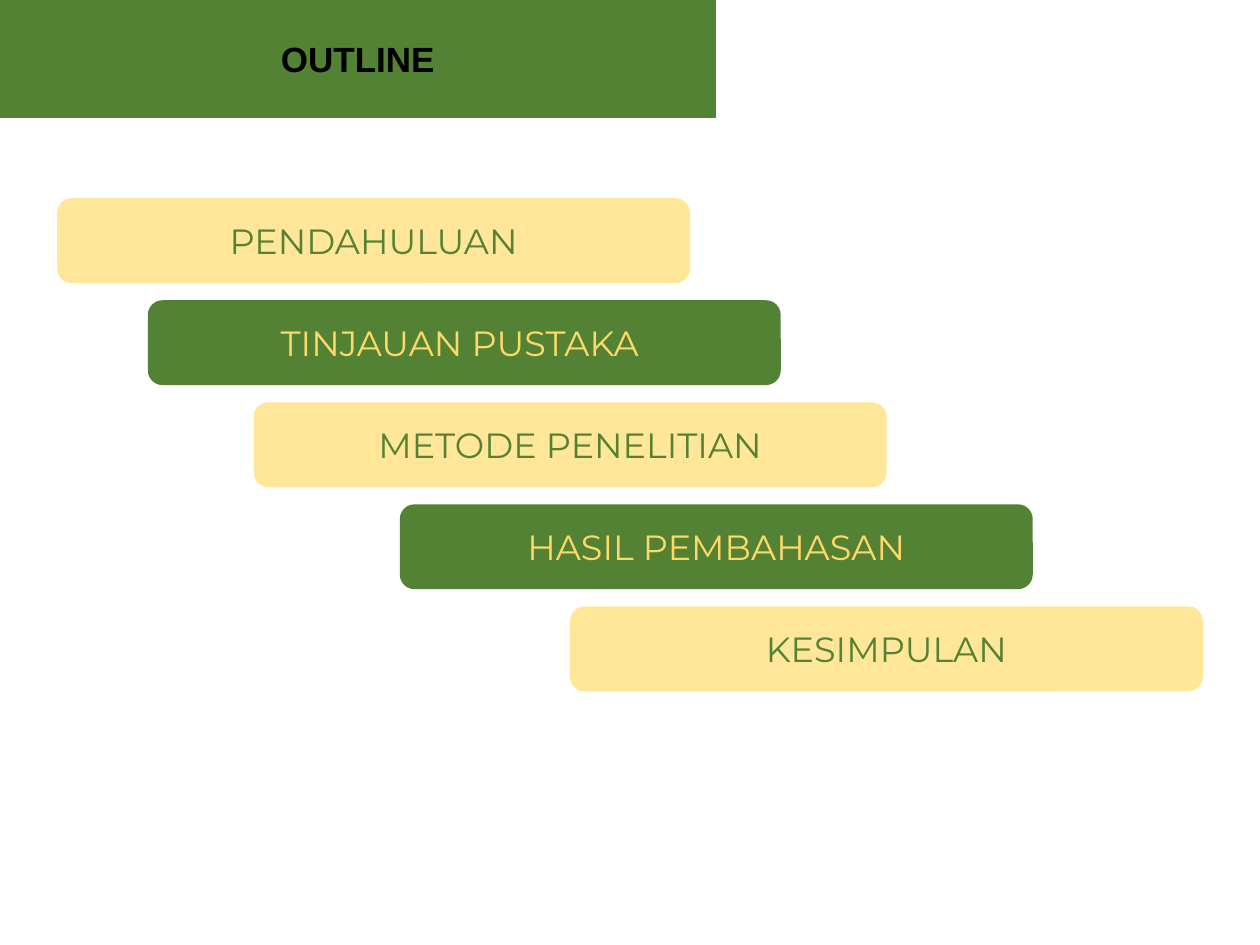
from pptx import Presentation
from pptx.dml.color import RGBColor
from pptx.enum.shapes import MSO_SHAPE as Shape
from pptx.enum.text import MSO_ANCHOR as Anchor, MSO_AUTO_SIZE as Fit, PP_ALIGN as Align
from pptx.util import Inches, Pt

GREEN = RGBColor(0x54, 0x82, 0x35)
CREAM = RGBColor(0xFF, 0xE6, 0x99)
GOLD = RGBColor(0xFF, 0xD9, 0x66)
BLACK = RGBColor(0, 0, 0)

TOP, STEP = 1.58, 0.81
BAR_W, BAR_H = 5.01, 0.66
# The trailing space sets the second heading slightly left of centre.
TOPICS = [
    (0.46, "PENDAHULUAN"),
    (1.18, "TINJAUAN PUSTAKA "),
    (2.02, "METODE PENELITIAN"),
    (3.18, "HASIL PEMBAHASAN"),
    (4.53, "KESIMPULAN"),
]


def paint(shape, color):
    shape.fill.solid()
    shape.fill.fore_color.rgb = color
    shape.line.color.rgb = color
    shape.line.width = Pt(1)


def write(shape, text, face, color, bold=False):
    frame = shape.text_frame
    frame.text = text
    frame.word_wrap = True
    frame.auto_size = Fit.NONE
    frame.vertical_anchor = Anchor.MIDDLE
    line = frame.paragraphs[0]
    line.alignment = Align.CENTER
    font = line.runs[0].font
    font.name, font.size, font.bold = face, Pt(20), bold
    font.color.rgb = color


def add_title(slide):
    title = slide.shapes.title
    title.left, title.top = 0, 0
    title.width, title.height = Inches(5.68), Inches(0.93)
    paint(title, GREEN)
    write(title, "OUTLINE", "Arial", BLACK, bold=True)


def add_bar(slide, row, left, text):
    bar = slide.shapes.add_shape(
        Shape.ROUNDED_RECTANGLE, Inches(left), Inches(TOP + row * STEP),
        Inches(BAR_W), Inches(BAR_H))
    bar.shadow.inherit = False
    fill, ink = (GREEN, GOLD) if row % 2 else (CREAM, GREEN)
    paint(bar, fill)
    write(bar, text, "Montserrat", ink)


def main():
    deck = Presentation()
    deck.slide_width, deck.slide_height = Inches(10), Inches(7.5)
    slide = deck.slides.add_slide(deck.slide_layouts[5])
    add_title(slide)
    for row, (left, text) in enumerate(TOPICS):
        add_bar(slide, row, left, text)
    deck.save("out.pptx")


if __name__ == "__main__":
    main()
